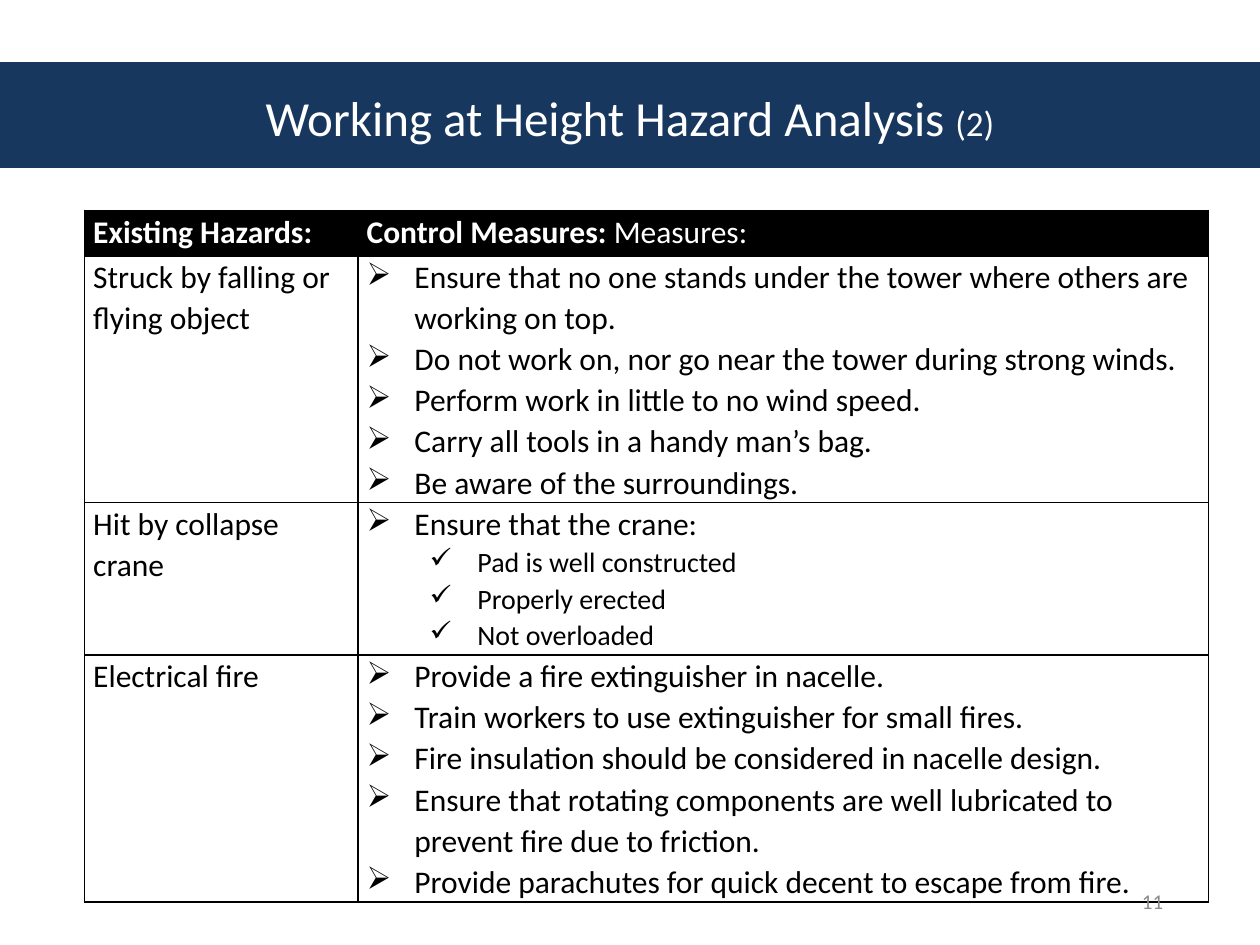
from lxml.etree import SubElement
from pptx import Presentation
from pptx.dml.color import RGBColor
from pptx.enum.shapes import MSO_SHAPE
from pptx.enum.text import MSO_ANCHOR, PP_ALIGN
from pptx.oxml.ns import qn
from pptx.util import Inches, Pt

NAVY, BLACK, WHITE, GRAY = "17375E", "000000", "FFFFFF", "8C8C8C"
ARROW, CHECK = "➢", "✓"

HAZARDS = [
    ("Struck by falling or flying object", [
        (ARROW, "Ensure that no one stands under the tower where others are working on top."),
        (ARROW, "Do not work on, nor go near the tower during strong winds."),
        (ARROW, "Perform work in little to no wind speed."),
        (ARROW, "Carry all tools in a handy man’s bag."),
        (ARROW, "Be aware of the surroundings."),
    ]),
    ("Hit by collapse crane", [
        (ARROW, "Ensure that the crane:"),
        (CHECK, "Pad is well constructed"),
        (CHECK, "Properly erected"),
        (CHECK, "Not overloaded"),
    ]),
    ("Electrical fire", [
        (ARROW, "Provide a fire extinguisher in nacelle."),
        (ARROW, "Train workers to use extinguisher for small fires."),
        (ARROW, "Fire insulation should be considered in nacelle design."),
        (ARROW, "Ensure that rotating components are well lubricated to prevent fire due to friction."),
        (ARROW, "Provide parachutes for quick decent to escape from fire."),
    ]),
]


def rgb(value):
    """Turn a hex string into a colour."""
    return RGBColor.from_string(value)


def add_text(paragraph, text, size=18, color=BLACK, bold=False):
    """Add a formatted run to a paragraph."""
    run = paragraph.add_run()
    run.text = text
    run.font.name = "Calibri"
    run.font.size = Pt(size)
    run.font.bold = bold
    run.font.color.rgb = rgb(color)


def place(shape, left, top, width, height):
    """Move and size a shape, in inches."""
    shape.left, shape.top = Inches(left), Inches(top)
    shape.width, shape.height = Inches(width), Inches(height)


def add_title(slide):
    """Fill the title placeholder and lay a full-width band behind it."""
    title = slide.shapes.title
    place(title, 0.5, 0.3, 9, 1.25)
    title.text_frame.vertical_anchor = MSO_ANCHOR.MIDDLE
    heading = title.text_frame.paragraphs[0]
    heading.alignment = PP_ALIGN.CENTER
    add_text(heading, "Working at Height Hazard Analysis ", size=28, color=WHITE)
    add_text(heading, "(2)", size=20, color=WHITE)

    band = slide.shapes.add_shape(MSO_SHAPE.RECTANGLE, 0, Inches(0.5), Inches(10), Inches(0.83))
    band.shadow.inherit = False
    band.fill.solid()
    band.fill.fore_color.rgb = rgb(NAVY)
    band.line.color.rgb = rgb(NAVY)
    band.line.width = Pt(0.75)
    title.element.addprevious(band.element)


def add_bullet(paragraph, mark):
    """Give a paragraph a bullet with a hanging indent set by its level."""
    paragraph.level = 1 if mark == CHECK else 0
    properties = paragraph._p.get_or_add_pPr()
    properties.set("marL", str(Inches(0.38 + 0.5 * paragraph.level)))
    properties.set("indent", str(Inches(-0.38)))
    SubElement(properties, qn("a:buChar"), char=mark)


def format_cell(cell, fill=None):
    """Set borders, fill and margins of a cell and return its first paragraph."""
    properties = cell._tc.get_or_add_tcPr()
    for side in ("lnL", "lnR", "lnT", "lnB"):
        border = SubElement(properties, qn(f"a:{side}"), w=str(Pt(1)))
        SubElement(SubElement(border, qn("a:solidFill")), qn("a:srgbClr"), val=BLACK)
    if fill:
        cell.fill.solid()
        cell.fill.fore_color.rgb = rgb(fill)
    else:
        cell.fill.background()
    cell.margin_left = cell.margin_right = Inches(0.07)
    cell.margin_top = cell.margin_bottom = 0
    first = cell.text_frame.paragraphs[0]
    first.line_spacing = 1.07
    return first


def add_measures(cell, measures):
    """Write the bulleted control measures into a cell."""
    paragraph = format_cell(cell)
    for index, (mark, measure) in enumerate(measures):
        if index:
            paragraph = cell.text_frame.add_paragraph()
            paragraph.line_spacing = 1.07
        add_bullet(paragraph, mark)
        add_text(paragraph, measure, size=16 if mark == CHECK else 18)


def add_hazard_table(slide):
    """Build the table of hazards and their control measures."""
    frame = slide.shapes.add_table(
        len(HAZARDS) + 1, 2, Inches(0.67), Inches(1.67), Inches(8.92), Inches(5.33))
    table = frame.table
    table.first_row = table.horz_banding = False
    for column, width in zip(table.columns, (2.17, 6.75)):
        column.width = Inches(width)
    for row, height in zip(table.rows, (0.36, 1.91, 1.21, 1.85)):
        row.height = Inches(height)

    hazard_heading = format_cell(table.cell(0, 0), fill=BLACK)
    add_text(hazard_heading, "Existing Hazards:", color=WHITE, bold=True)
    measure_heading = format_cell(table.cell(0, 1), fill=BLACK)
    add_text(measure_heading, "Control Measures:", color=WHITE, bold=True)
    add_text(measure_heading, " Measures:", color=WHITE)

    for row, (hazard, measures) in enumerate(HAZARDS, start=1):
        add_text(format_cell(table.cell(row, 0)), hazard)
        add_measures(table.cell(row, 1), measures)


def add_page_number(slide, number):
    """Write the page number at the lower right."""
    box = slide.shapes.add_textbox(Inches(7), Inches(6.95), Inches(2.33), Inches(0.4))
    box.text_frame.word_wrap = True
    box.text_frame.vertical_anchor = MSO_ANCHOR.MIDDLE
    paragraph = box.text_frame.paragraphs[0]
    paragraph.alignment = PP_ALIGN.RIGHT
    add_text(paragraph, number, size=12, color=GRAY)


def main():
    """Build and save the slide."""
    deck = Presentation()
    deck.slide_width, deck.slide_height = Inches(10), Inches(7.5)
    slide = deck.slides.add_slide(deck.slide_layouts[5])
    add_title(slide)
    add_hazard_table(slide)
    add_page_number(slide, "11")
    deck.save("out.pptx")


if __name__ == "__main__":
    main()
